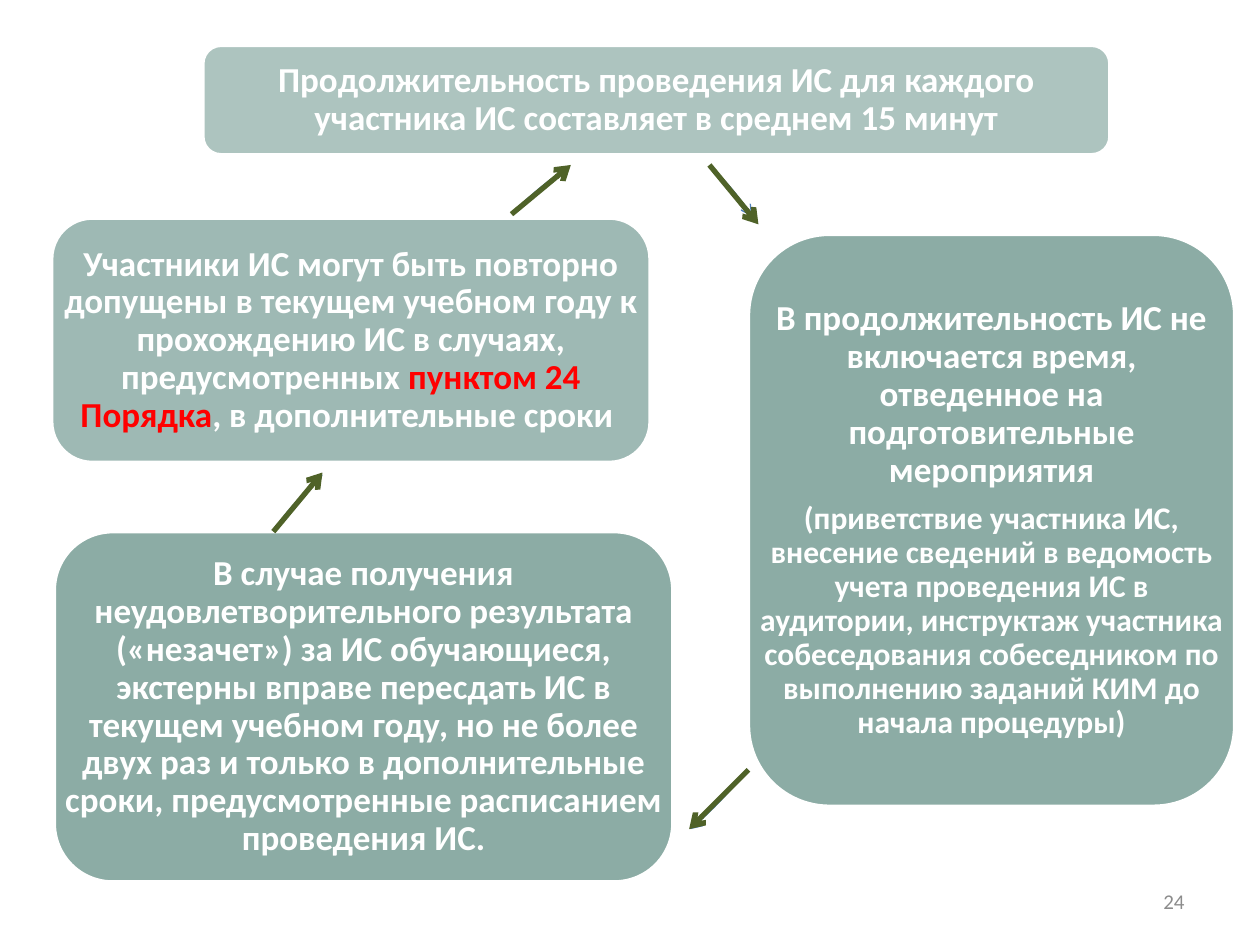
from dataclasses import dataclass

from lxml import etree
from pptx import Presentation
from pptx import util as u
from pptx.dml.color import RGBColor
from pptx.enum import shapes, text
from pptx.oxml.ns import qn

COLORS = {"box": "68928A", "white": "FFFFFF", "accent": "FF0000",
          "arrow": "4F6228", "arc": "4F81BD", "number": "8C8C8C"}
FONT = "Calibri"
INSET = 5.76
ARC_STEPS = 8


@dataclass(frozen=True)
class Run:
    wording: str
    size: int = 20
    color: str = "white"
    bold: bool = True


@dataclass(frozen=True)
class Stage:
    left: float
    top: float
    width: float
    height: float
    opacity: int
    paragraphs: tuple[tuple[Run, ...], ...]


@dataclass(frozen=True)
class Step:
    start: tuple[float, float]
    end: tuple[float, float]
    arc: tuple[tuple[float, float], ...]


STAGES = (
    Stage(115.9, 25.9, 518.4, 62.6, 54, ((
        Run("Продолжительность проведения ИС для каждого участника ИС "
            "составляет в среднем 15 минут"),),)),
    Stage(427.7, 133.9, 277.9, 326.9, 76, (
        (Run("В продолжительность ИС не включается время, отведенное на "
             "подготовительные мероприятия"),),
        (Run("(приветствие участника ИС, внесение сведений в ведомость учета "
             "проведения ИС в аудитории, инструктаж участника собеседования "
             "собеседником по выполнению заданий КИМ до начала процедуры)", 18),))),
    Stage(31, 303.8, 353.5, 200.2, 76, ((
        Run("В случае получения неудовлетворительного результата («незачет») "
            "за ИС обучающиеся, экстерны вправе пересдать ИС в текущем учебном "
            "году, но не более двух раз и только в дополнительные сроки, "
            "предусмотренные расписанием проведения ИС."),),)),
    Stage(29.5, 124.6, 342, 139.7, 64, ((
        Run("Участники ИС могут быть повторно допущены в текущем учебном году "
            "к прохождению ИС в случаях, предусмотренных "),
        Run("пунктом 24 Порядка", color="accent"),
        Run(", в дополнительные сроки ")),)),
)

STEPS = (
    Step((405.4, 94.3), (433.4, 128.2),
         ((408.2, 97.2), (416.2, 105.1), (424.1, 114.5), (429.8, 123.8))),
    Step((427.7, 439.9), (393.8, 473.8),
         ((420.5, 447.8), (412.6, 457.2), (403.9, 465.8), (394.6, 473.8))),
    Step((156.2, 303.8), (184.3, 270),
         ((162, 295.2), (169.2, 286.6), (176.4, 278.6), (184.3, 271.4))),
    Step((292.3, 122.4), (326.2, 94.3),
         ((298.1, 116.6), (306.7, 108.7), (315.4, 101.5), (325.4, 95))),
)


def rgb(name: str) -> RGBColor:
    """Return the named colour."""
    return RGBColor.from_string(COLORS[name])


def add_run(paragraph, run: Run) -> None:
    """Append a formatted run to a paragraph."""
    piece = paragraph.add_run()
    piece.text = run.wording
    piece.font.name = FONT
    piece.font.size = u.Pt(run.size)
    piece.font.bold = run.bold
    piece.font.color.rgb = rgb(run.color)


def add_stage(slide, stage: Stage) -> None:
    """Draw a translucent rounded box and its centred wording."""
    place = [u.Pt(v) for v in (stage.left, stage.top, stage.width, stage.height)]
    box = slide.shapes.add_shape(shapes.MSO_SHAPE.ROUNDED_RECTANGLE, *place)
    box.shadow.inherit = False
    box.fill.solid()
    box.fill.fore_color.rgb = rgb("box")
    tint = box._element.spPr.find(qn("a:solidFill")).find(qn("a:srgbClr"))
    etree.SubElement(tint, qn("a:alpha"), val=str(stage.opacity * 1000))
    box.line.color.rgb = rgb("white")
    box.line.width = u.Pt(2)

    frame = slide.shapes.add_textbox(*place).text_frame
    frame.word_wrap = True
    frame.vertical_anchor = text.MSO_ANCHOR.MIDDLE
    frame.margin_left = frame.margin_right = u.Pt(INSET)
    frame.margin_top = frame.margin_bottom = u.Pt(INSET)
    for index, runs in enumerate(stage.paragraphs):
        paragraph = frame.add_paragraph() if index else frame.paragraphs[0]
        paragraph.alignment = text.PP_ALIGN.CENTER
        paragraph.line_spacing = 0.9
        paragraph.space_after = u.Pt(7)
        for run in runs:
            add_run(paragraph, run)


def style_arrow(arrow, color: str, width: float) -> None:
    """Give a line its colour, width and open arrowhead."""
    arrow.line.color.rgb = rgb(color)
    arrow.line.width = u.Pt(width)
    etree.SubElement(arrow.line._get_or_add_ln(), qn("a:tailEnd"), type="arrow")


def arc_point(arc: tuple[tuple[float, float], ...], t: float) -> tuple[int, int]:
    """Return the point at t on a cubic curve."""
    weights = ((1 - t) ** 3, 3 * t * (1 - t) ** 2, 3 * t * t * (1 - t), t ** 3)
    x, y = (sum(w * p[axis] for w, p in zip(weights, arc)) for axis in (0, 1))
    return u.Pt(x), u.Pt(y)


def add_arc(slide, step: Step) -> None:
    """Draw the thin curved arrow of a step."""
    first, *rest = [arc_point(step.arc, i / ARC_STEPS) for i in range(ARC_STEPS + 1)]
    builder = slide.shapes.build_freeform(*first)
    builder.add_line_segments(rest, close=False)
    arc = builder.convert_to_shape()
    arc.shadow.inherit = False
    arc.fill.background()
    style_arrow(arc, "arc", 0.75)


def add_arrow(slide, step: Step) -> None:
    """Draw the bold straight arrow of a step."""
    ends = [u.Pt(v) for v in step.start + step.end]
    arrow = slide.shapes.add_connector(shapes.MSO_CONNECTOR.STRAIGHT, *ends)
    style_arrow(arrow, "arrow", 3)
    etree.SubElement(arrow._element.spPr, qn("a:effectLst"))


def add_page_number(slide) -> None:
    """Write the page number at the lower right."""
    frame = slide.shapes.add_textbox(
        u.Pt(516.2), u.Pt(500.4), u.Pt(167.8), u.Pt(28.8)).text_frame
    frame.word_wrap = True
    frame.vertical_anchor = text.MSO_ANCHOR.MIDDLE
    frame.paragraphs[0].alignment = text.PP_ALIGN.RIGHT
    add_run(frame.paragraphs[0], Run("24", 12, "number", False))


def main() -> None:
    """Build and save the slide."""
    deck = Presentation()
    deck.slide_width, deck.slide_height = u.Pt(720), u.Pt(540)
    slide = deck.slides.add_slide(deck.slide_layouts[6])
    for stage, step in zip(STAGES, STEPS):
        add_stage(slide, stage)
        add_arc(slide, step)
    for step in STEPS:
        add_arrow(slide, step)
    add_page_number(slide)
    deck.save("out.pptx")


if __name__ == "__main__":
    main()
